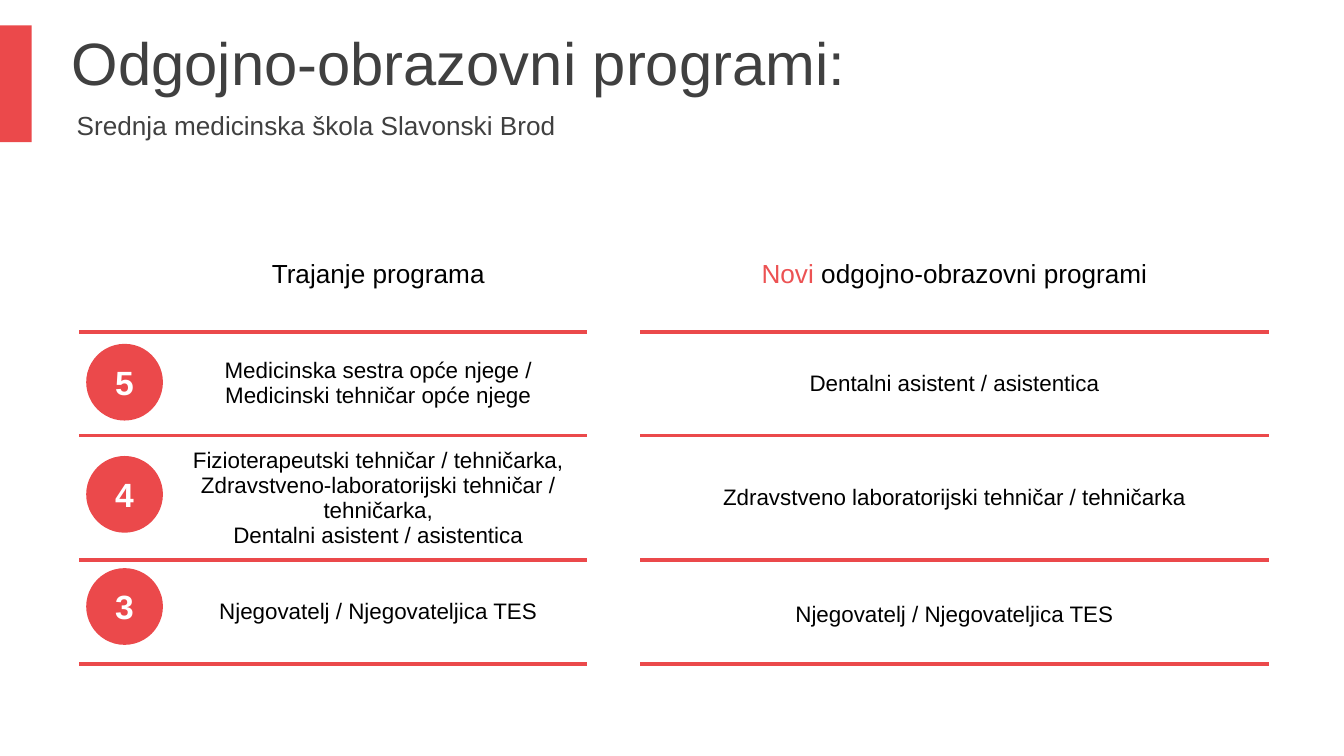
from lxml.etree import SubElement
from pptx import Presentation
from pptx.dml.color import RGBColor
from pptx.enum.shapes import MSO_SHAPE
from pptx.enum.text import MSO_ANCHOR, MSO_AUTO_SIZE, PP_ALIGN
from pptx.oxml import parse_xml
from pptx.oxml.ns import nsdecls, qn
from pptx.util import Cm, Pt

COLORS = {"red": "EB494B", "new": "EC5253", "heading": "404040",
          "text": "000000", "white": "FFFFFF"}
FONT = "Arial"
NO_STYLE = "{2D5ABB26-0587-4C30-8999-92F81FD0307C}"

COLUMN_WIDTHS = [1.7, 7.9, 1.0, 1.0, 9.88, 1.0]
ROW_HEIGHTS = [2.16, 1.96, 2.36, 1.96]
GAP_COLUMN = 2

# Each text is a list of paragraphs, each paragraph a list of (text, colour)
HEADERS = {
    1: [[("Trajanje programa", "text")]],
    4: [[("Novi", "new"), (" odgojno-obrazovni programi", "text")]],
}
PROGRAMMES = [
    ("5", ["Medicinska sestra opće njege / Medicinski tehničar opće njege"],
     "Dentalni asistent / asistentica"),
    ("4", ["Fizioterapeutski tehničar / tehničarka, "
           "Zdravstveno-laboratorijski tehničar / tehničarka,",
           "Dentalni asistent / asistentica"],
     "Zdravstveno laboratorijski tehničar / tehničarka"),
    ("3", ["Njegovatelj / Njegovateljica TES"],
     "Njegovatelj / Njegovateljica TES"),
]


def rgb(name):
    return RGBColor.from_string(COLORS[name])


def apply_format(target, values):
    for attribute, value in values.items():
        setattr(target, attribute, value)


def write(frame, paragraphs, size, align, bold=False):
    for index, runs in enumerate(paragraphs):
        paragraph = frame.add_paragraph() if index else frame.paragraphs[0]
        apply_format(paragraph, {"alignment": align, "space_before": Pt(0)})
        for text, color in runs:
            run = paragraph.add_run()
            run.text = text
            apply_format(run.font, {"name": FONT, "size": Pt(size), "bold": bold})
            run.font.color.rgb = rgb(color)


def add_red_shape(slide, preset, left, top, width, height):
    shape = slide.shapes.add_shape(preset, Cm(left), Cm(top), Cm(width), Cm(height))
    shape.shadow.inherit = False
    shape.fill.solid()
    shape.fill.fore_color.rgb = rgb("red")
    shape.line.fill.background()
    return shape


def add_heading(shape, text, size, left, top, width, height):
    apply_format(shape, {"left": Cm(left), "top": Cm(top),
                         "width": Cm(width), "height": Cm(height)})
    apply_format(shape.text_frame, {"word_wrap": True,
                                    "auto_size": MSO_AUTO_SIZE.NONE,
                                    "vertical_anchor": MSO_ANCHOR.MIDDLE})
    write(shape.text_frame, [[(text, "heading")]], size, PP_ALIGN.LEFT)


def add_number(slide, number, top):
    circle = add_red_shape(slide, MSO_SHAPE.OVAL, 1.63, top, 1.45, 1.45)
    apply_format(circle.text_frame, {
        "margin_left": 0, "margin_right": 0, "margin_top": 0, "margin_bottom": 0,
        "word_wrap": False, "vertical_anchor": MSO_ANCHOR.MIDDLE})
    write(circle.text_frame, [[(number, "white")]], 18, PP_ALIGN.CENTER, bold=True)


def set_borders(cell, edges):
    properties = cell._tc.get_or_add_tcPr()
    for position, edge in enumerate(edges):
        line = parse_xml(f'<a:{edge} {nsdecls("a")} w="{Pt(2.25)}"/>')
        fill = SubElement(line, qn("a:solidFill"))
        SubElement(fill, qn("a:srgbClr"), val=COLORS["red"])
        properties.insert(position, line)


def add_programme_table(slide):
    table = slide.shapes.add_table(
        len(ROW_HEIGHTS), len(COLUMN_WIDTHS), Cm(1.5), Cm(4.11),
        Cm(sum(COLUMN_WIDTHS)), Cm(sum(ROW_HEIGHTS))).table
    apply_format(table, {"first_row": False, "horz_banding": False})
    table._tbl.tblPr.find(qn("a:tableStyleId")).text = NO_STYLE
    for column, width in zip(table.columns, COLUMN_WIDTHS):
        column.width = Cm(width)
    for row, height in zip(table.rows, ROW_HEIGHTS):
        row.height = Cm(height)

    # Clear cells, with red rules on both sides of the gap column
    for row_index, row in enumerate(table.rows):
        for column_index, cell in enumerate(row.cells):
            cell.fill.background()
            cell.vertical_anchor = MSO_ANCHOR.MIDDLE
            if column_index != GAP_COLUMN:
                set_borders(cell, ["lnT", "lnB"] if row_index else ["lnB"])

    # Header row
    for column_index, paragraphs in HEADERS.items():
        write(table.cell(0, column_index).text_frame, paragraphs, 14, PP_ALIGN.CENTER)

    # Programme rows
    for row_index, (_, current, new) in enumerate(PROGRAMMES, 1):
        new_cell = table.cell(row_index, 3)
        new_cell.merge(table.cell(row_index, 5))
        for cell, lines in ((table.cell(row_index, 1), current), (new_cell, [new])):
            write(cell.text_frame, [[(line, "text")] for line in lines],
                  12, PP_ALIGN.CENTER)
    apply_format(new_cell, {"vertical_anchor": MSO_ANCHOR.BOTTOM,
                            "margin_bottom": Cm(0.7)})


def main():
    presentation = Presentation()
    apply_format(presentation, {"slide_width": Cm(25.4), "slide_height": Cm(14.29)})
    slide = presentation.slides.add_slide(presentation.slide_layouts[5])

    # Accent bar and headings
    add_red_shape(slide, MSO_SHAPE.RECTANGLE, 0, 0.48, 0.6, 2.21)
    add_heading(slide.shapes.title, "Odgojno-obrazovni programi:",
                32, 1.1, 0.36, 19.4, 1.6)
    subtitle = slide.shapes.add_textbox(0, 0, 0, 0)
    add_heading(subtitle, "Srednja medicinska škola Slavonski Brod",
                14, 1.2, 1.96, 19.4, 0.8)

    # Programmes with their duration in years
    add_programme_table(slide)
    for index, (years, _, _) in enumerate(PROGRAMMES):
        add_number(slide, years, 6.5 + 2.12 * index)

    presentation.save("out.pptx")


if __name__ == "__main__":
    main()
